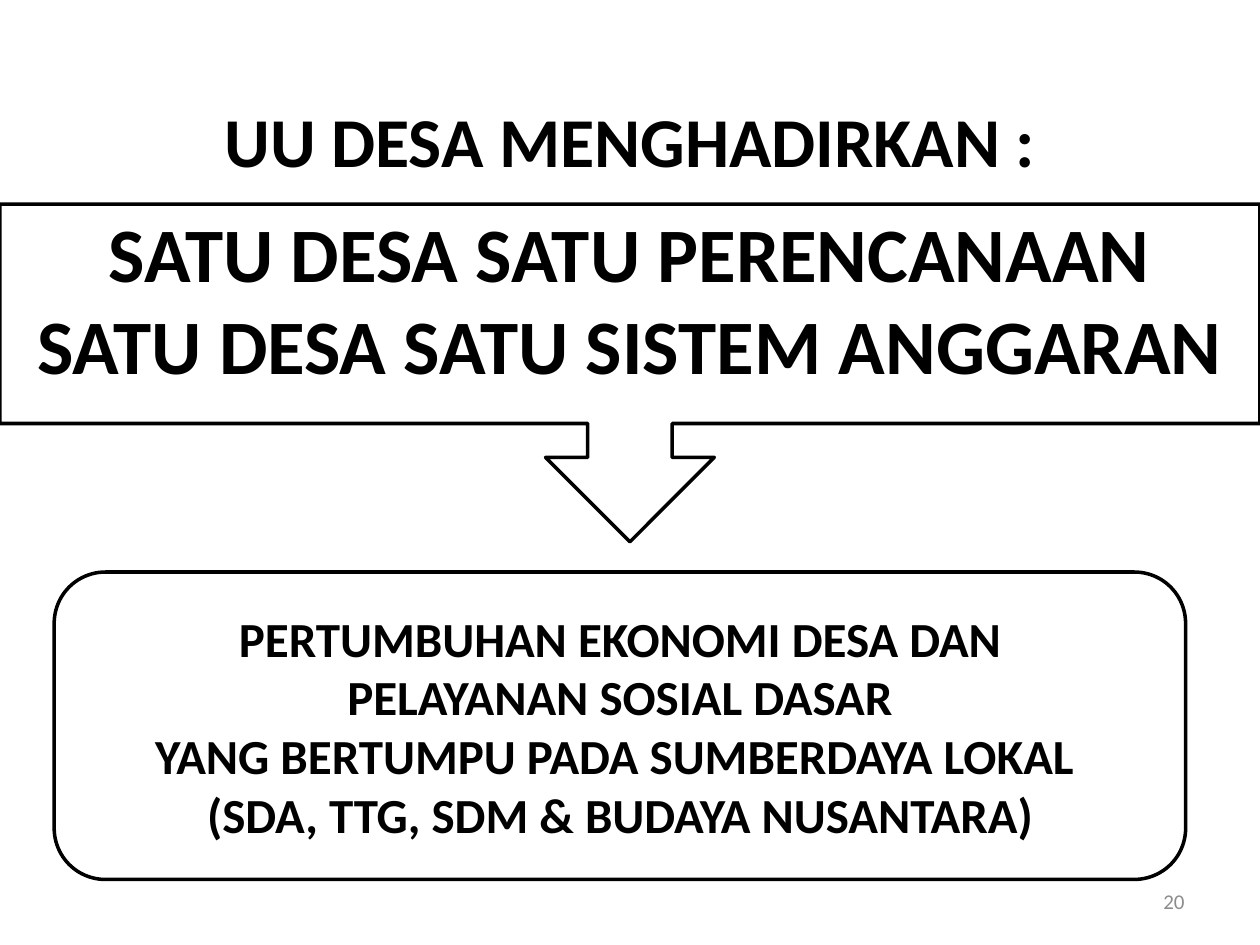
"""Build the slide on one village, one plan and one budget system."""
from pptx import Presentation
from pptx.dml.color import RGBColor
from pptx.enum.shapes import MSO_SHAPE as SHAPE
from pptx.enum.text import MSO_ANCHOR as ANCHOR, PP_ALIGN as ALIGN
from pptx.util import Inches, Pt


def rgb(value):
    return RGBColor.from_string(value)


def write(sp, text, size, color="000000", bold=True, align=ALIGN.CENTER, anchor=ANCHOR.MIDDLE):
    tf = sp.text_frame
    tf.word_wrap = True
    tf.vertical_anchor = anchor
    for i, line in enumerate(text.split("\n")):
        p = tf.add_paragraph() if i else tf.paragraphs[0]
        p.alignment = align
        r = p.add_run()
        r.text = line
        r.font.name = "Calibri"
        r.font.size = Pt(size)
        r.font.bold = bold
        r.font.color.rgb = rgb(color)


prs = Presentation()
prs.slide_width, prs.slide_height = Inches(10), Inches(7.5)
W, H = prs.slide_width, prs.slide_height
s = prs.slides.add_slide(prs.slide_layouts[6])

number = s.shapes.add_textbox(int(W * 0.717), Inches(6.95), int(W * 0.233), Inches(0.4))
write(number, "20", 12, color="8C8C8C", bold=False, align=ALIGN.RIGHT)

title = s.shapes.add_textbox(0, Inches(0.52), W, Inches(1.18))
write(title, "UU DESA MENGHADIRKAN :", 40)

callout = s.shapes.add_shape(SHAPE.DOWN_ARROW_CALLOUT, 0, Inches(1.62), W, Inches(2.68))
callout.text_frame.margin_top = Inches(0.01)
write(callout, "SATU DESA SATU PERENCANAAN\nSATU DESA SATU SISTEM ANGGARAN", 44, anchor=ANCHOR.TOP)

goal = s.shapes.add_shape(
    SHAPE.ROUNDED_RECTANGLE, int(W * 0.043), Inches(4.54), int(W * 0.898), Inches(2.44))
write(goal, "PERTUMBUHAN EKONOMI DESA DAN\nPELAYANAN SOSIAL DASAR\n"
      "YANG BERTUMPU PADA SUMBERDAYA LOKAL \n(SDA, TTG, SDM & BUDAYA NUSANTARA)", 28)

for sp in (callout, goal):
    sp.shadow.inherit = False
    sp.fill.solid()
    sp.fill.fore_color.rgb = rgb("FFFFFF")
    sp.line.color.rgb = rgb("000000")
    sp.line.width = Pt(2)

prs.save("out.pptx")
